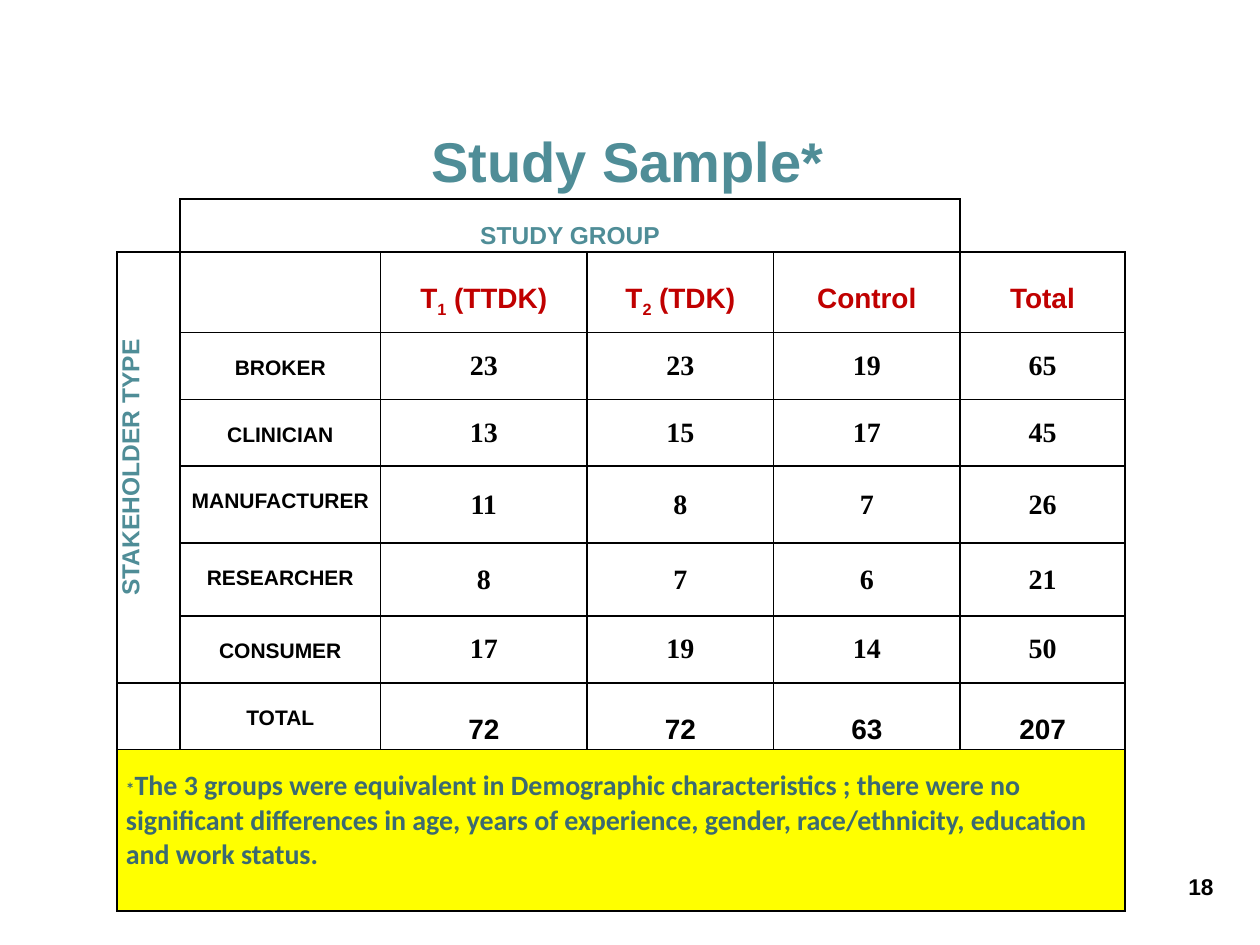
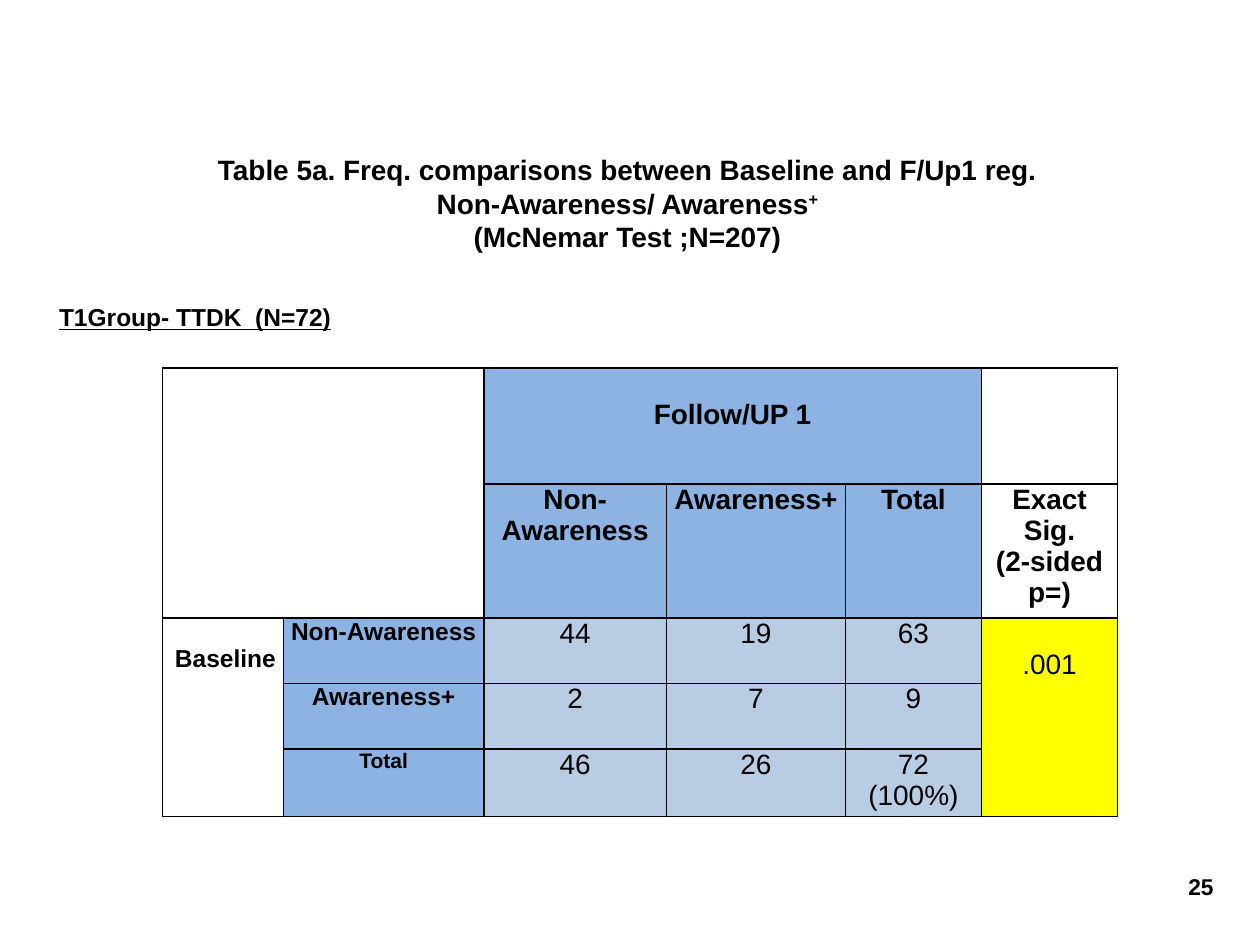
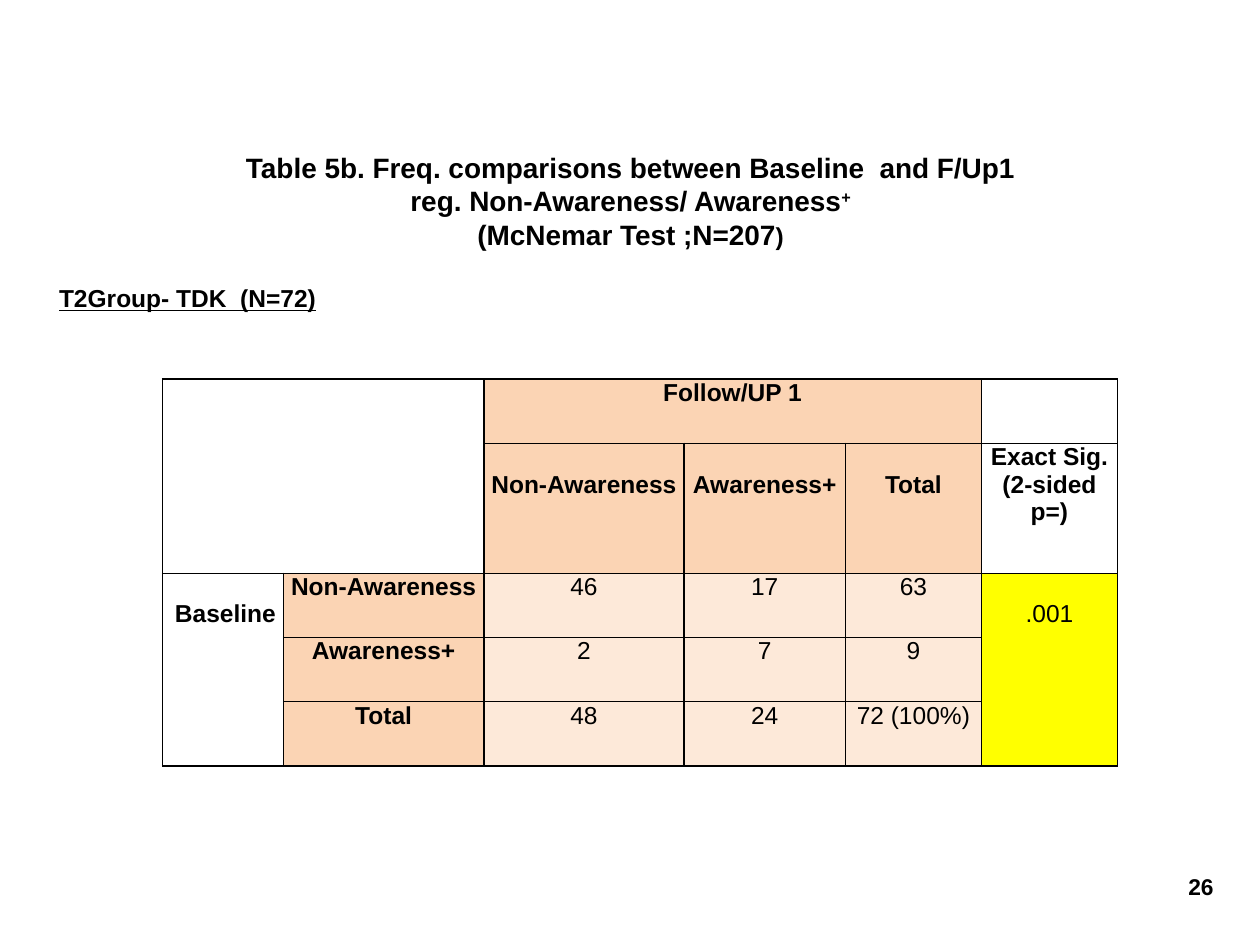
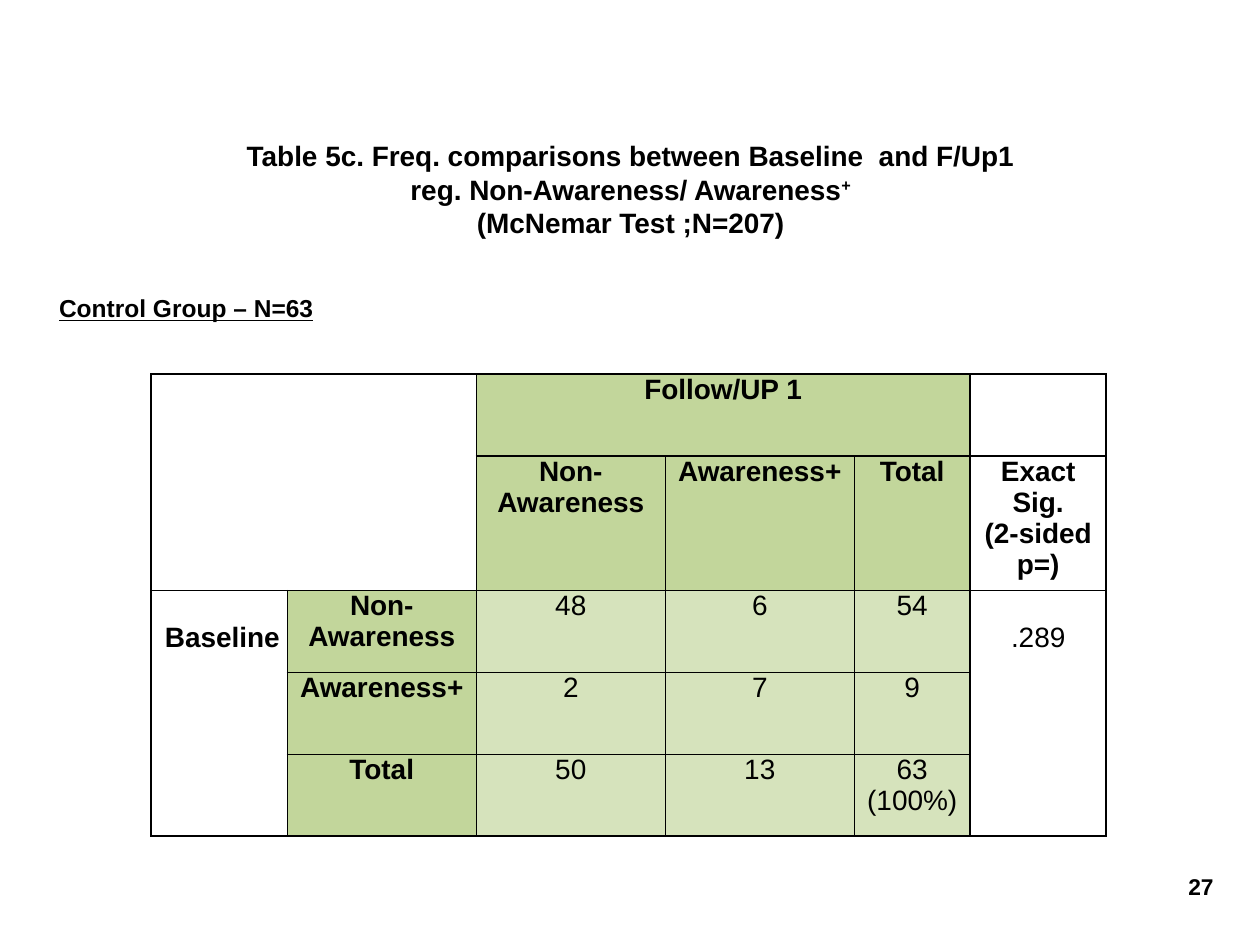
from lxml import etree
from pptx import Presentation
from pptx.dml.color import RGBColor
from pptx.enum.text import MSO_ANCHOR, PP_ALIGN
from pptx.oxml.ns import qn
from pptx.util import Inches, Pt

LEFT, CENTER, RIGHT = PP_ALIGN.LEFT, PP_ALIGN.CENTER, PP_ALIGN.RIGHT
TOP, MIDDLE, BOTTOM = MSO_ANCHOR.TOP, MSO_ANCHOR.MIDDLE, MSO_ANCHOR.BOTTOM
BLANK_LAYOUT = 6
LINE_HEIGHT = 1.12  # line height as a multiple of the font size

COLORS = {
    "black": "000000", "white": "FFFFFF", "teal": "4F8D97", "dark teal": "3B6A71",
    "red": "C00000", "yellow": "FFFF00",
    "blue": "8DB3E2", "light blue": "B8CCE4",
    "orange": "FBD4B4", "light orange": "FDE9D9",
    "green": "C2D69B", "light green": "D6E3BC",
}

# Content: study sample
SAMPLE = {
    "number": 18,
    "title": "Study Sample*",
    "at": (0.93, 1.58),
    "columns": [0.5, 1.59, 1.64, 1.48, 1.48, 1.31],
    "rows": [0.42, 0.64, 0.53, 0.53, 0.61, 0.58, 0.53, 0.53, 1.28],
    "groups": [
        [("T", {}), ("1", {"baseline": -25}), (" (TTDK)", {})],
        [("T", {}), ("2", {"baseline": -25}), (" (TDK)", {})],
        "Control",
        "Total",
    ],
    "stakeholders": [
        ("BROKER", 23, 23, 19, 65),
        ("CLINICIAN", 13, 15, 17, 45),
        ("MANUFACTURER", 11, 8, 7, 26),
        ("RESEARCHER", 8, 7, 6, 21),
        ("CONSUMER", 17, 19, 14, 50),
        ("TOTAL", 72, 72, 63, 207),
    ],
    "note": [
        ("*", {"size": 10}),
        ("The 3 groups were equivalent in Demographic characteristics ; there were no "
         "significant differences in age, years of experience, gender, race/ethnicity, "
         "education and work status.", {}),
    ],
}

# Content: baseline against follow-up, one table per study group
COLUMN_HEADS = ["Non-Awareness", "Awareness+", "Total"]
SIGNIFICANCE_HEAD = ["Exact Sig.", "(2-sided p=)"]
COMPARISONS = [
    {
        "number": 25,
        "title": "Table 5a. Freq. comparisons between Baseline and F/Up1 reg. "
                 "Non-Awareness/ Awareness",
        "title_at": (1.63, 1.44, 6.7, 0.62), "title_end": [("(McNemar Test ;N=207)", {})],
        "group": "T1Group- TTDK  (N=72)", "group_at": (0.37, 2.11, 9.25, 0.81),
        "group_lead": 0,
        "at": (1.29, 2.92), "columns": [0.96, 1.59, 1.45, 1.42, 1.08, 1.08],
        "rows": [0.92, 1.05, 0.52, 0.52, 0.52],
        "size": 16, "label_sizes": [14, 14, 12], "lead": (16, 0),
        "fills": ("blue", "light blue", "yellow"),
        "counts": [(44, 19, 63), (2, 7, 9), (46, 26, "72 (100%)")],
        "significance": ".001",
    },
    {
        "number": 26,
        "title": "Table 5b. Freq. comparisons between Baseline  and F/Up1 reg. "
                 "Non-Awareness/ Awareness",
        "title_at": (1.83, 1.42, 6.35, 0.62),
        "title_end": [("(McNemar Test ;N=207", {}), (")", {"size": 14})],
        "group": "T2Group- TDK  (N=72)", "group_at": (0.37, 1.96, 9.25, 0.81),
        "group_lead": 0,
        "at": (1.29, 3.01), "columns": [0.96, 1.59, 1.59, 1.28, 1.08, 1.08],
        "rows": [0.51, 1.03, 0.51, 0.51, 0.51],
        "size": 14, "label_sizes": [14, 14, 14], "lead": (0, 14),
        "fills": ("orange", "light orange", "yellow"),
        "counts": [(46, 17, 63), (2, 7, 9), (48, 24, "72 (100%)")],
        "significance": ".001",
    },
    {
        "number": 27,
        "title": "Table 5c. Freq. comparisons between Baseline  and F/Up1 reg. "
                 "Non-Awareness/ Awareness",
        "title_at": (1.82, 1.33, 6.37, 0.62), "title_end": [("(McNemar Test ;N=207)", {})],
        "group": "Control Group – N=63", "group_at": (0.37, 2.05, 9.25, 0.57),
        "group_lead": 14,
        "at": (1.2, 2.97), "columns": [1.08, 1.5, 1.5, 1.5, 0.92, 1.08],
        "rows": [0.65, 0.76, 0.65, 0.65, 0.65],
        "size": 16, "label_sizes": [16, 16, 16], "lead": (0, 0),
        "fills": ("green", "light green", "white"),
        "counts": [(48, 6, 54), (2, 7, 9), (50, 13, "63 (100%)")],
        "significance": ".289",
    },
]


def rgb(name):
    return RGBColor.from_string(COLORS[name])


def lead_space(size):
    """Top margin as high as one line of text of this size."""
    return Pt(size * LINE_HEIGHT)


def write(frame, lines, size, bold=True, color="black", font="Arial", align=CENTER,
          underline=None):
    """Fill a text frame; a line is a string or a list of (text, changes) runs."""
    for index, line in enumerate(lines):
        paragraph = frame.paragraphs[0] if index == 0 else frame.add_paragraph()
        paragraph.alignment = align
        paragraph.font.name = font
        paragraph.font.size = Pt(size)
        paragraph.font.bold = bold
        paragraph.font.underline = underline
        paragraph.font.color.rgb = rgb(color)
        for text, changes in [(line, {})] if isinstance(line, str) else line:
            if text == "\n":
                paragraph.add_line_break()
                continue
            run = paragraph.add_run()
            run.text = text
            if "size" in changes:
                run.font.size = Pt(changes["size"])
            if "baseline" in changes:
                run.font._element.set("baseline", str(changes["baseline"] * 1000))


def add_text(slide, at, line, size, anchor=TOP, lead=0, **style):
    box = slide.shapes.add_textbox(*map(Inches, at))
    frame = box.text_frame
    frame.word_wrap = True
    frame.vertical_anchor = anchor
    frame.margin_top += lead_space(lead)
    write(frame, [line], size, **style)


def add_slide(presentation, number):
    slide = presentation.slides.add_slide(presentation.slide_layouts[BLANK_LAYOUT])
    add_text(slide, (7.72, 6.88, 2.01, 0.37), str(number), 13, align=RIGHT)
    return slide


def set_borders(cell, sides="LRTB"):
    """Draw black lines on the given sides and none on the others."""
    properties = cell._tc.get_or_add_tcPr()
    for side in "LRTB":
        line = etree.SubElement(properties, qn(f"a:ln{side}"), w=str(Pt(1)))
        if side in sides:
            fill = etree.SubElement(line, qn("a:solidFill"))
            etree.SubElement(fill, qn("a:srgbClr"), val=COLORS["black"])
        else:
            etree.SubElement(line, qn("a:noFill"))


def add_grid(slide, at, columns, rows, side_margin, open_corners=None):
    """Add a plain white table; open_corners maps (row, column) to its drawn sides."""
    open_corners = open_corners or {}
    table = slide.shapes.add_table(len(rows), len(columns), *map(
        Inches, (*at, sum(columns), sum(rows)))).table
    table.first_row = table.horz_banding = False
    for column, width in zip(table.columns, columns):
        column.width = Inches(width)
    for row_index, height in enumerate(rows):
        table.rows[row_index].height = Inches(height)
        for column_index in range(len(columns)):
            cell = table.cell(row_index, column_index)
            cell.margin_left = cell.margin_right = Inches(side_margin)
            cell.margin_top = cell.margin_bottom = 0
            sides = open_corners.get((row_index, column_index))
            set_borders(cell, sides or "LRTB")
            if sides:
                cell.fill.background()
            else:
                fill_cell(cell, "white")
    return table


def fill_cell(cell, color):
    cell.fill.solid()
    cell.fill.fore_color.rgb = rgb(color)


def set_cell(cell, lines, size, fill=None, lead=0, anchor=TOP, **style):
    if fill:
        fill_cell(cell, fill)
    cell.margin_top = lead_space(lead)
    cell.vertical_anchor = anchor
    write(cell.text_frame, lines, size, **style)


def add_sample_slide(presentation, sample):
    slide = add_slide(presentation, sample["number"])
    last_column, last_row = len(sample["columns"]) - 1, len(sample["rows"]) - 1
    table = add_grid(slide, sample["at"], sample["columns"], sample["rows"], 0.07,
                     {(0, 0): "RB", (0, last_column): "LB"})
    table.cell(0, 1).merge(table.cell(0, last_column - 1))
    table.cell(1, 0).merge(table.cell(last_row - 2, 0))
    table.cell(last_row, 0).merge(table.cell(last_row, last_column))

    # Headings
    set_cell(table.cell(0, 1), ["STUDY GROUP"], 14, lead=12, color="teal")
    set_cell(table.cell(1, 0), ["STAKEHOLDER TYPE"], 14, color="teal")
    table.cell(1, 0)._tc.get_or_add_tcPr().set("vert", "vert270")
    for column, group in enumerate(sample["groups"], start=2):
        set_cell(table.cell(1, column), [group], 16, lead=16, color="red")

    # Counts
    for row, (label, *counts) in enumerate(sample["stakeholders"], start=2):
        set_cell(table.cell(row, 1), [label], 12, lead=12)
        if label == "TOTAL":
            style = {"lead": 16}
        else:
            style = {"anchor": MIDDLE, "font": "Times New Roman"}
        for column, count in enumerate(counts, start=2):
            set_cell(table.cell(row, column), [str(count)], 16, **style)

    set_cell(table.cell(last_row, 0), [sample["note"]], 16, fill="yellow", lead=10,
             color="dark teal", font="Calibri", align=LEFT)
    add_text(slide, (0.37, 0.97, 9.22, 0.62), sample["title"], 32, anchor=BOTTOM,
             color="teal")


def add_comparison_slide(presentation, data):
    slide = add_slide(presentation, data["number"])
    table = add_grid(slide, data["at"], data["columns"], data["rows"], 0.06)
    for first, last in [((0, 0), (1, 1)), ((0, 2), (0, 4)),
                        ((2, 0), (4, 0)), ((2, 5), (4, 5))]:
        table.cell(*first).merge(table.cell(*last))
    size = data["size"]
    head_fill, count_fill, significance_fill = data["fills"]
    top_lead, column_lead = data["lead"]

    # Headings
    set_cell(table.cell(0, 2), ["Follow/UP 1"], size, head_fill, top_lead)
    for column, head in enumerate(COLUMN_HEADS, start=2):
        set_cell(table.cell(1, column), [head], size, head_fill, column_lead)
    set_cell(table.cell(1, 5), SIGNIFICANCE_HEAD, size)
    label_size = data["label_sizes"][0]
    set_cell(table.cell(2, 0), ["Baseline"], label_size, lead=label_size, align=RIGHT)

    # Counts and significance
    labelled_rows = zip(COLUMN_HEADS, data["label_sizes"], data["counts"])
    for row, (label, label_size, counts) in enumerate(labelled_rows, start=2):
        set_cell(table.cell(row, 1), [label], label_size, head_fill)
        for column, count in enumerate(counts, start=2):
            set_cell(table.cell(row, column), [str(count)], size, count_fill, bold=False)
    set_cell(table.cell(2, 5), [data["significance"]], size, significance_fill, size,
             bold=False)

    # Group name and title
    add_text(slide, data["group_at"], data["group"], 14, anchor=MIDDLE,
             lead=data["group_lead"], align=LEFT, underline=True)
    title = [(data["title"], {}), ("+", {"baseline": 30}), ("\n", {}), *data["title_end"]]
    add_text(slide, data["title_at"], title, 16, anchor=BOTTOM)


def main():
    presentation = Presentation()
    presentation.slide_width, presentation.slide_height = Inches(10), Inches(7.5)
    add_sample_slide(presentation, SAMPLE)
    for comparison in COMPARISONS:
        add_comparison_slide(presentation, comparison)
    presentation.save("out.pptx")


if __name__ == "__main__":
    main()
